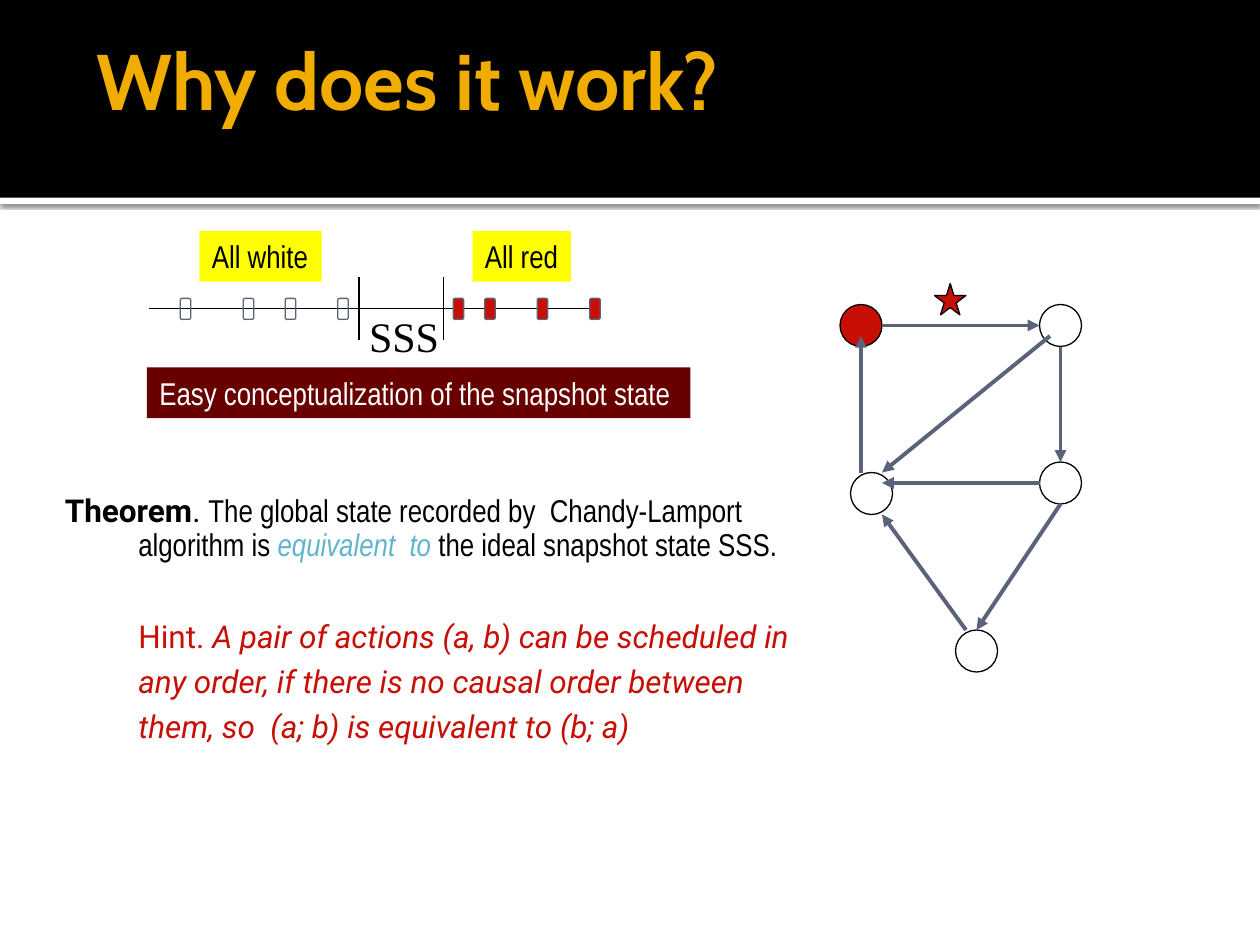
from lxml import etree
from pptx import Presentation
from pptx.dml.color import RGBColor
from pptx.enum.shapes import MSO_CONNECTOR, MSO_SHAPE
from pptx.enum.text import MSO_ANCHOR, MSO_AUTO_SIZE
from pptx.oxml.ns import qn
from pptx.util import Pt

STRAIGHT = MSO_CONNECTOR.STRAIGHT
RECT, ROUNDED = MSO_SHAPE.RECTANGLE, MSO_SHAPE.ROUNDED_RECTANGLE
OVAL, STAR = MSO_SHAPE.OVAL, MSO_SHAPE.STAR_5_POINT
MIDDLE, TOP = MSO_ANCHOR.MIDDLE, MSO_ANCHOR.TOP
FIT, FIXED = MSO_AUTO_SIZE.SHAPE_TO_FIT_TEXT, MSO_AUTO_SIZE.NONE

BLACK, WHITE, GOLD, YELLOW = "000000", "FFFFFF", "F0AD00", "FFFF00"
RED, MAROON, SLATE, SKY = "C70F05", "680000", "5A6378", "60B5CC"
NARROW, ROBOTO = "Arial Narrow", "Roboto"

# Content: each paragraph is a list of (text, format) spans
TITLE = [[("Why does it work?", dict(font="Cabin", size=45, color=GOLD, bold=True))]]
THEOREM = [
    ("Theorem", dict(font=ROBOTO, bold=True)),
    (". ", dict(font=ROBOTO)),
    ("The global state recorded by  Chandy-Lamport algorithm is ", {}),
    ("equivalent  to", dict(color=SKY, italic=True)),
    (" the ideal snapshot state SSS.", {}),
]
HINT = [
    ("Hint. ", dict(font=ROBOTO, color=RED)),
    ("A pair of actions (a, b) can be scheduled in any order, if there is no causal "
     "order between them, so  (a; b) is equivalent to (b; a)",
     dict(font=ROBOTO, color=RED, italic=True)),
]
LABELS = [  # text, place, fill, format
    ("SSS", (203.8, 174, 54.7, 36), None, dict(font="Times New Roman", size=24)),
    ("Easy conceptualization of the snapshot state", (84, 210, 310.5, 29), MAROON,
     dict(color=WHITE)),
    ("All white", (114, 132, 69.8, 29), YELLOW, {}),
    ("All red", (270, 132, 56.2, 29), YELLOW, {}),
]

# Process graph: node corners with fill, and arrows from point to point
NODE_SIZE = 24
NODES = [(480, 174, RED), (594, 264, None), (486, 270, None),
         (594, 174, None), (546, 360, None)]
ARROWS = [
    ((504, 186), (594, 186)), ((606, 198), (606, 264)), ((594, 276), (504, 276)),
    ((492, 270), (492, 192)), ((600, 192), (504, 270)), ((606, 288), (558, 360)),
    ((552, 360), (504, 294)),
]

# Timeline: event positions by colour, and the two snapshot marks
TIME_Y = 176.5
EVENTS = [(None, (103, 139, 163, 193)), (RED, (259, 277, 307, 337))]
EVENT_WIDTH, EVENT_HEIGHT = 6, 12
MARKS = (205.2, 253.4)

deck = Presentation()
deck.slide_width, deck.slide_height = Pt(720), Pt(540)
page = deck.slides.add_slide(deck.slide_layouts[6])


def rgb(code):
    return RGBColor.from_string(code)


def add_shape(kind, place, fill=None, line=None):
    shape = page.shapes.add_shape(kind, *map(Pt, place))
    shape.shadow.inherit = False
    if fill:
        shape.fill.solid()
        shape.fill.fore_color.rgb = rgb(fill)
    else:
        shape.fill.background()
    if line:
        shape.line.color.rgb = rgb(line)
        shape.line.width = Pt(0.75)
    else:
        shape.line.fill.background()
    return shape


def add_line(start, end, color=BLACK, width=0.75, arrow=False):
    line = page.shapes.add_connector(STRAIGHT, *map(Pt, start + end))
    line.line.color.rgb = rgb(color)
    line.line.width = Pt(width)
    if arrow:
        outline = line.line._get_or_add_ln()
        etree.SubElement(outline, qn("a:tailEnd"), type="triangle")
    etree.SubElement(line._element.spPr, qn("a:effectLst"))


def add_span(para, text, font=NARROW, size=18, color=BLACK, bold=False, italic=False):
    span = para.add_run()
    span.text = text
    span.font.name, span.font.size = font, Pt(size)
    span.font.color.rgb = rgb(color)
    span.font.bold, span.font.italic = bold, italic


def add_text(paragraphs, place, fill=None, wrap=True, anchor=TOP,
             insets=(7.2, 3.6, 7.2, 3.6)):
    box = page.shapes.add_textbox(*map(Pt, place))
    if fill:
        box.fill.solid()
        box.fill.fore_color.rgb = rgb(fill)
    frame = box.text_frame
    frame.word_wrap = wrap
    frame.auto_size = FIXED if wrap else FIT
    frame.vertical_anchor = anchor
    (frame.margin_left, frame.margin_top,
     frame.margin_right, frame.margin_bottom) = map(Pt, insets)
    for index, spans in enumerate(paragraphs):
        para = frame.add_paragraph() if index else frame.paragraphs[0]
        for text, style in spans:
            add_span(para, text, **style)
    return frame


# Header band with a shadowed white rule
rule = add_shape(RECT, (0, 113, 720, 3.6), WHITE)
effects = rule._element.spPr.find(qn("a:effectLst"))
shadow = etree.SubElement(effects, qn("a:outerShdw"), blurRad=str(Pt(2.5)),
                          dist=str(Pt(0.8)), dir="5400000", rotWithShape="0")
shade = etree.SubElement(shadow, qn("a:srgbClr"), val=BLACK)
etree.SubElement(shade, qn("a:alpha"), val="60000")
add_shape(RECT, (0, 0, 720, 113), BLACK)
add_text(TITLE, (48, 0, 612, 90), anchor=MIDDLE, insets=(7.2, 3.6, 3.6, 3.6))

# Theorem with a hanging indent, and the indented hint
body = add_text([THEOREM, HINT], (30, 276, 432, 234), insets=(7.2, 7.2, 7.2, 3.6))
theorem, hint = body.paragraphs
theorem.line_spacing, hint.line_spacing = 0.9, 1.2
hint.space_before = Pt(26)
for para, indent in ((theorem, -42), (hint, 0)):
    settings = para._p.get_or_add_pPr()
    settings.set("marL", str(Pt(42)))
    settings.set("indent", str(Pt(indent)))

# Process graph
for left, top, fill in NODES:
    add_shape(OVAL, (left, top, NODE_SIZE, NODE_SIZE), fill, BLACK)
for start, end in ARROWS:
    add_line(start, end, color=SLATE, width=2.25, arrow=True)
add_shape(STAR, (534, 162, 18, 18), RED, BLACK)

# Timeline
add_line((85, TIME_Y), (343.5, TIME_Y))
for fill, lefts in EVENTS:
    for left in lefts:
        add_shape(ROUNDED, (left, TIME_Y - EVENT_HEIGHT / 2, EVENT_WIDTH, EVENT_HEIGHT),
                  fill, SLATE)
for mark in MARKS:
    add_line((mark, TIME_Y - 18), (mark, TIME_Y + 18))

# Labels
for text, place, fill, style in LABELS:
    add_text([[(text, style)]], place, fill=fill, wrap=False)

deck.save("out.pptx")
